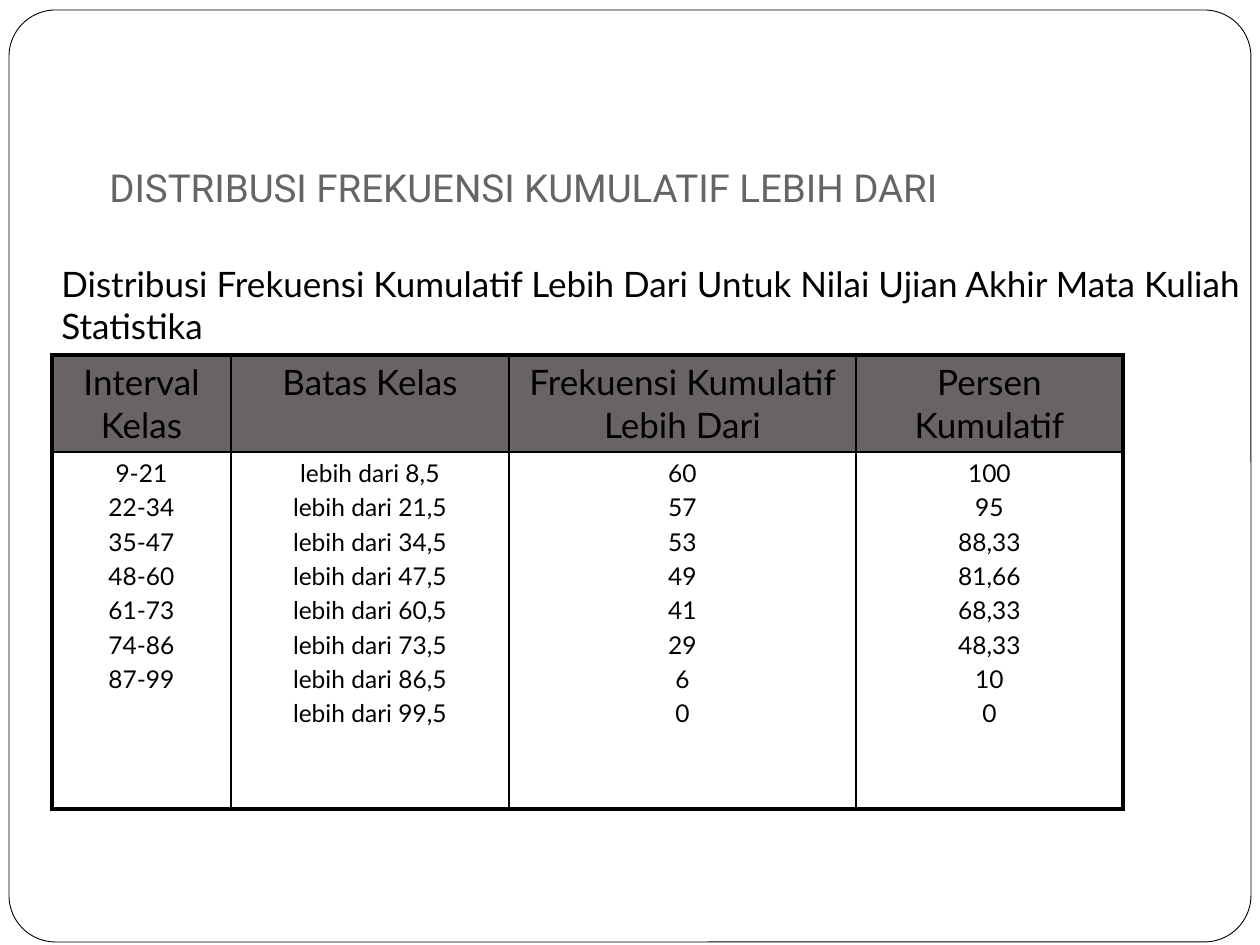
from lxml.etree import SubElement
from pptx import Presentation
from pptx.dml.color import RGBColor
from pptx.enum.shapes import MSO_SHAPE
from pptx.enum.text import MSO_ANCHOR, PP_ALIGN
from pptx.oxml.ns import qn
from pptx.util import Emu, Pt

PX_PER_INCH = 126
COLORS = {"black": "000000", "white": "FFFFFF", "gray": "696464"}


def px(*lengths):
    """Turn px lengths into a list of EMU lengths."""
    return [Emu(round(length * 914400 / PX_PER_INCH)) for length in lengths]


def format_text(paragraph, font_name, size, color):
    for run in paragraph.runs:
        run.font.name = font_name
        run.font.size = Pt(size)
        run.font.color.rgb = RGBColor.from_string(COLORS[color])


prs = Presentation()
prs.slide_width, prs.slide_height = px(1260, 945)
slide = prs.slides.add_slide(prs.slide_layouts[6])

# Rounded frame
frame = slide.shapes.add_shape(MSO_SHAPE.ROUNDED_RECTANGLE, *px(9, 10, 1242, 932))
frame.adjustments[0] = 0.05
frame.shadow.inherit = False
frame.fill.solid()
frame.fill.fore_color.rgb = RGBColor.from_string(COLORS["white"])
frame.line.color.rgb = RGBColor.from_string(COLORS["black"])
frame.line.width = Pt(0.5)

# Title and caption
title = slide.shapes.add_textbox(*px(97, 21, 1074, 202)).text_frame
title.word_wrap = True
title.vertical_anchor = MSO_ANCHOR.BOTTOM
title.margin_bottom = px(13)[0]
title.text = "DISTRIBUSI FREKUENSI KUMULATIF LEBIH DARI"
format_text(title.paragraphs[0], "Roboto", 22, "gray")

caption = slide.shapes.add_textbox(*px(49, 256, 1211, 97)).text_frame
caption.word_wrap = True
caption.text = (
    "Distribusi Frekuensi Kumulatif Lebih Dari Untuk Nilai Ujian Akhir "
    "Mata Kuliah Statistika"
)
format_text(caption.paragraphs[0], "Lato", 20, "black")

# Cumulative frequency table: one header row, one row of stacked values
lower_bounds = range(9, 88, 13)
columns = {
    "Interval Kelas": [f"{low}-{low + 12}" for low in lower_bounds],
    "Batas Kelas": [f"lebih dari {low - 1},5" for low in [*lower_bounds, 100]],
    "Frekuensi Kumulatif Lebih Dari": ["60", "57", "53", "49", "41", "29", "6", "0"],
    "Persen Kumulatif": ["100", "95", "88,33", "81,66", "68,33", "48,33", "10", "0"],
}
column_widths = px(179, 278, 347, 267)
row_heights = px(97, 357)
last_column = len(columns) - 1

table = slide.shapes.add_table(
    2, len(columns), *px(52, 355), sum(column_widths), sum(row_heights)
).table
table.first_row = False
table.horz_banding = False
for row, height in zip(table.rows, row_heights):
    row.height = height

for col, (heading, values) in enumerate(columns.items()):
    table.columns[col].width = column_widths[col]
    for row, (text, size) in enumerate([(heading, 20), ("\n".join(values), 14)]):
        cell = table.cell(row, col)
        cell.text = text
        for paragraph in cell.text_frame.paragraphs:
            paragraph.alignment = PP_ALIGN.CENTER
            paragraph.space_before = Pt(size * 0.2)
            format_text(paragraph, "Lato", size, "black")

        # Thick outer edges, thin inner ones
        outer_edges = {
            "a:lnL": col == 0,
            "a:lnR": col == last_column,
            "a:lnT": row == 0,
            "a:lnB": row == 1,
        }
        properties = cell._tc.get_or_add_tcPr()
        for edge, is_outer in outer_edges.items():
            border = SubElement(properties, qn(edge), w=str(Pt(2.25 if is_outer else 1)))
            border_fill = SubElement(border, qn("a:solidFill"))
            SubElement(border_fill, qn("a:srgbClr"), val=COLORS["black"])

        if row == 0:
            cell.fill.solid()
            cell.fill.fore_color.rgb = RGBColor.from_string(COLORS["gray"])
        else:
            cell.fill.background()

prs.save("out.pptx")
